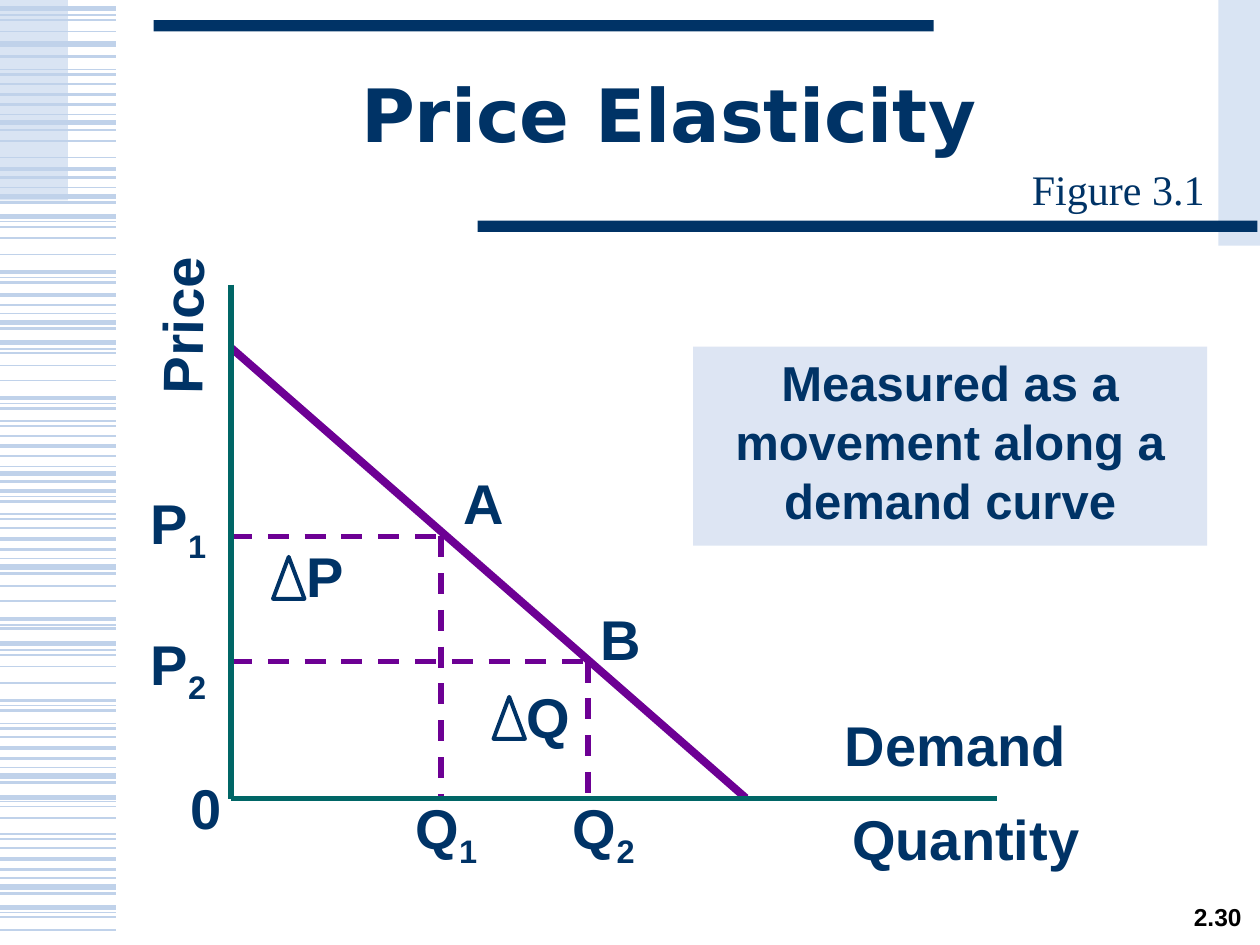
from lxml import etree
from pptx import Presentation
from pptx import util as u
from pptx.dml.color import RGBColor
from pptx.enum import dml, shapes, text
from pptx.oxml.ns import qn

COLORS = {
    "navy": "003366", "pale": "D9E4F3", "panel": "DDE5F3", "stripe": "C0D2EA",
    "purple": "6D0094", "green": "006666", "black": "000000",
}

BLOCKS = [
    ("pale", 0, 0, 38.9, 114.5),
    ("navy", 87.8, 11.5, 445.7, 6.5),
    ("pale", 696.2, 0, 23.8, 140.4),
    ("navy", 272.9, 126, 445.7, 6.5),
]

STRIPE_WIDTH = 66.2
STRIPES = {
    3: [5, 25.2, 69.8, 112.3, 123.8, 184.3, 195.8, 270.7, 324, 367.9, 443.5,
        455.8, 506.9, 518.4],
    2.25: [54, 96.5, 155.5, 168.5, 227.5, 254.9, 280.8, 308.2, 353.5, 400.3,
           427.7, 491],
    1.5: [32.4, 42.5, 59.8, 74.2, 101.5, 115.9, 161.3, 174.2, 187.9, 233.3,
          243.4, 260.6, 275, 286.6, 296.6, 313.9, 327.6, 359.3, 406.1, 416.2,
          433.4, 447.1, 479.5, 496.8, 510.5],
    1: [11.5, 18, 48.2, 80.6, 90, 129.6, 136.1, 145.4, 201.6, 208.8, 217.4,
        249.1, 301.7, 334.8, 343.4, 374.4, 380.9, 390.2, 421.2, 460.8, 467.3,
        476.6, 484.6, 524.2, 531.4],
    0.75: [8.6, 39.6, 65.5, 107.3, 126.7, 158.4, 179.3, 199.4, 230.4, 240.5,
           266.4, 283.7, 293.8, 319, 357.1, 371.5, 403.2, 413.3, 438.5, 457.9,
           501.8, 521.3],
}

ORIGIN = (132, 456.5)
AXIS_TOP, AXIS_RIGHT = 162.7, 570
DEMAND_CURVE = ((132, 198.7), (426.2, 456))
CURVE_POINTS = [(252, 306.4), (336, 378)]

LABEL_HEIGHT = 45
LABELS = [
    ("A", "", 258, 264, 30, 0),
    ("B", "", 336, 342, 36, 0),
    ("Quantity", "", 462, 456, 180, 0),
    ("Price", "", 43.2, 163.4, 120, 270.8),
    ("P", "1", 78, 275.8, 48, 0),
    ("P", "2", 78, 356.4, 48, 0),
    ("0", "", 102, 438.5, 24, 0),
    ("Q", "1", 228, 450, 54, 0),
    ("Q", "2", 318, 450, 54, 0),
    ("Demand", "", 456, 402.5, 180, 0),
    ("Q", "", 294, 386.6, 36, 0),
    ("P", "", 168, 306, 36, 0),
]
DELTAS = [(282, 398.2), (156, 318.2)]
DELTA_SIZE = (18, 24)


def color(name):
    return RGBColor.from_string(COLORS[name])


def box(left, top, width, height):
    return [u.Pt(value) for value in (left, top, width, height)]


def write_text(shape, content, size=32, font="Arial", fill="navy", bold=True,
               subscript="", spacing=None, wrap=True, anchor=text.MSO_ANCHOR.TOP):
    frame = shape.text_frame
    frame.word_wrap = wrap
    frame.vertical_anchor = anchor
    paragraph = frame.paragraphs[0]
    paragraph.alignment = text.PP_ALIGN.CENTER
    if spacing:
        paragraph.line_spacing = spacing
    for part in filter(None, (content, subscript)):
        run = paragraph.add_run()
        run.text = part
        run.font.size = u.Pt(size)
        run.font.name = font
        run.font.bold = bold
        run.font.color.rgb = color(fill)
    if subscript:
        run._r.get_or_add_rPr().set("baseline", "-25000")


def add_line(slide, start, end, name, weight, dashed=False):
    line = slide.shapes.add_connector(
        shapes.MSO_CONNECTOR.STRAIGHT, *[u.Pt(value) for value in (*start, *end)])
    line.line.color.rgb = color(name)
    line.line.width = u.Pt(weight)
    if dashed:
        line.line.dash_style = dml.MSO_LINE.DASH
    etree.SubElement(line._element.spPr, qn("a:effectLst"))


def add_block(slide, name, *place):
    shape = slide.shapes.add_shape(shapes.MSO_SHAPE.RECTANGLE, *box(*place))
    shape.shadow.inherit = False
    shape.fill.solid()
    shape.fill.fore_color.rgb = color(name)
    shape.line.fill.background()
    return shape


def add_template(slide):
    for block in BLOCKS:
        add_block(slide, *block)
    for weight, heights in STRIPES.items():
        for y in heights:
            add_line(slide, (0, y), (STRIPE_WIDTH, y), "stripe", weight)
    number = slide.shapes.add_textbox(*box(671.8, 516.2, 48.2, 19.4))
    write_text(number, "2.30", size=14, fill="black", spacing=0.7, wrap=False,
               anchor=text.MSO_ANCHOR.MIDDLE)


def add_graph(slide):
    left, bottom = ORIGIN
    add_line(slide, *DEMAND_CURVE, "purple", 4.5)
    for x, y in CURVE_POINTS:
        add_line(slide, (left, y), (x, y), "purple", 3, dashed=True)
        add_line(slide, (x, y), (x, bottom), "purple", 3, dashed=True)
    add_line(slide, (left, AXIS_TOP), ORIGIN, "green", 3)
    add_line(slide, ORIGIN, (AXIS_RIGHT, bottom), "green", 3)
    for content, subscript, x, y, width, rotation in LABELS:
        label = slide.shapes.add_textbox(*box(x, y, width, LABEL_HEIGHT))
        label.rotation = rotation
        write_text(label, content, subscript=subscript)
    for x, y in DELTAS:
        delta = slide.shapes.add_shape(
            shapes.MSO_SHAPE.ISOSCELES_TRIANGLE, *box(x, y, *DELTA_SIZE))
        delta.shadow.inherit = False
        delta.fill.background()
        delta.line.color.rgb = color("navy")
        delta.line.width = u.Pt(2.25)


def main():
    presentation = Presentation()
    presentation.slide_width, presentation.slide_height = u.Pt(720), u.Pt(540)
    slide = presentation.slides.add_slide(presentation.slide_layouts[5])
    add_template(slide)

    title = slide.shapes.title
    title.left, title.top, title.width, title.height = box(90, 23.8, 599, 90)
    write_text(title, "Price Elasticity ", size=42, font="DejaVu Sans",
               spacing=0.85, anchor=text.MSO_ANCHOR.MIDDLE)

    add_graph(slide)
    panel = add_block(slide, "panel", 396, 198, 293.8, 113.8)
    write_text(panel, "Measured as a movement along a demand curve", size=28)
    caption = slide.shapes.add_textbox(*box(576, 95.8, 126, 23.8))
    write_text(caption, "Figure 3.1", size=24, font="Times New Roman", bold=False,
               wrap=False, anchor=text.MSO_ANCHOR.MIDDLE)
    presentation.save("out.pptx")


if __name__ == "__main__":
    main()
